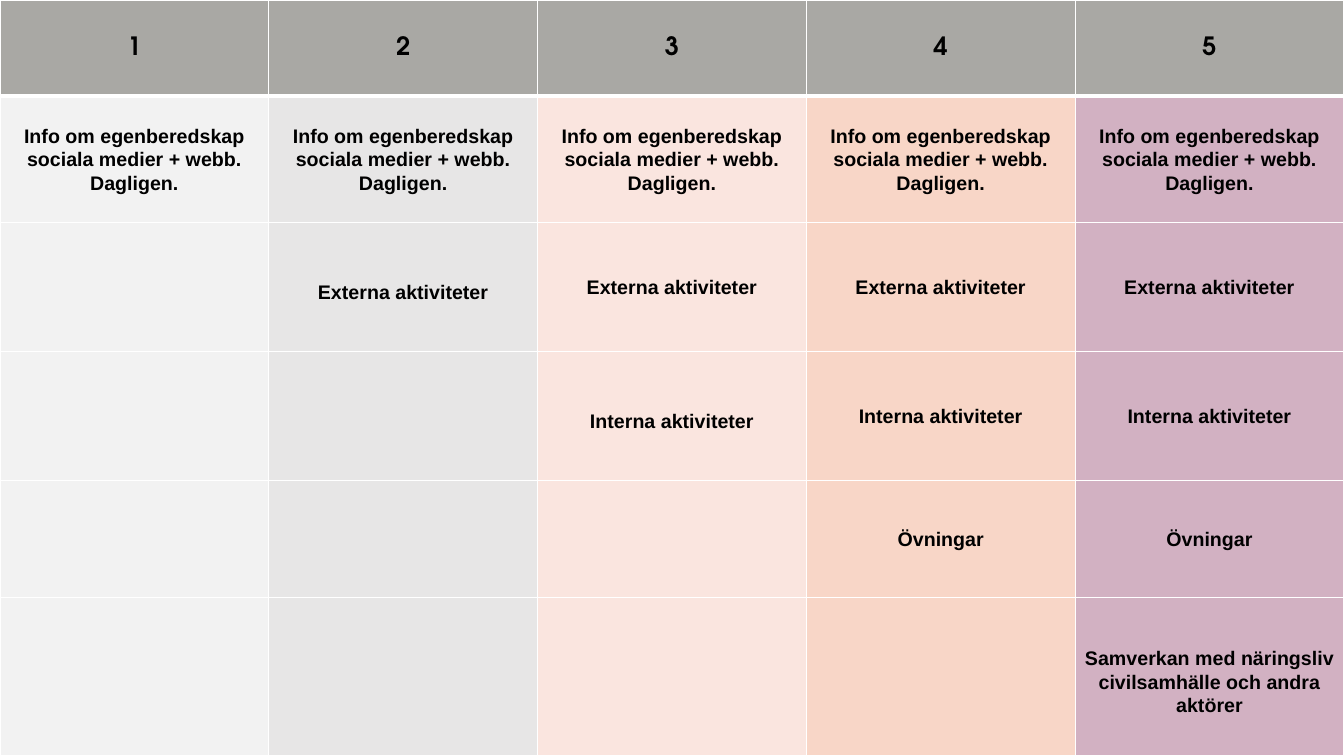
from dataclasses import dataclass

from lxml import etree
from pptx import Presentation
from pptx.dml.color import RGBColor
from pptx.enum.text import MSO_ANCHOR, PP_ALIGN
from pptx.oxml.ns import qn
from pptx.table import _Cell
from pptx.util import Inches, Pt

MIDDLE = MSO_ANCHOR.MIDDLE
CENTER = PP_ALIGN.CENTER

BLACK = RGBColor(0x00, 0x00, 0x00)
WHITE = RGBColor(0xFF, 0xFF, 0xFF)
HEADER_GRAY = RGBColor(0xA9, 0xA8, 0xA4)
LEVEL_COLORS = [
    RGBColor(0xF2, 0xF2, 0xF2),
    RGBColor(0xE7, 0xE6, 0xE6),
    RGBColor(0xFA, 0xE5, 0xDF),
    RGBColor(0xF8, 0xD6, 0xC7),
    RGBColor(0xD2, 0xB1, 0xC2),
]

SLIDE_WIDTH = 13.33
SLIDE_HEIGHT = 7.5
HEADER_HEIGHT = 0.95
THIN_BORDER = 1
HEADER_BORDER = 3


@dataclass(frozen=True)
class Activity:
    text: str
    first_level: int
    height: float
    first_top_margin: float = 0


ACTIVITIES = [
    Activity("Info om egenberedskap sociala medier + webb. Dagligen.", 1, 1.26),
    Activity("Externa aktiviteter", 2, 1.28, 0.1),
    Activity("Interna aktiviteter", 3, 1.28, 0.1),
    Activity("Övningar", 4, 1.16),
    Activity("Samverkan med näringsliv civilsamhälle och andra aktörer", 5, 1.57, 0.1),
]


def add_border(cell: _Cell, side: str, points: float) -> None:
    properties = cell._tc.get_or_add_tcPr()
    line = etree.SubElement(properties, qn(f"a:{side}"), w=str(Pt(points)))
    fill = etree.SubElement(line, qn("a:solidFill"))
    etree.SubElement(fill, qn("a:srgbClr"), val=str(WHITE))


def style_cell(cell: _Cell, color: RGBColor, top: float, bottom: float) -> None:
    borders = {"lnL": THIN_BORDER, "lnR": THIN_BORDER, "lnT": top, "lnB": bottom}
    for side, points in borders.items():
        add_border(cell, side, points)
    cell.fill.solid()
    cell.fill.fore_color.rgb = color
    cell.vertical_anchor = MIDDLE
    cell.margin_left = cell.margin_right = Inches(0.07)
    cell.margin_top = cell.margin_bottom = Inches(0)


def write_cell(cell: _Cell, text: str, font_name: str, size: float) -> None:
    cell.text = text
    paragraph = cell.text_frame.paragraphs[0]
    paragraph.alignment = CENTER
    paragraph.line_spacing = 1.06
    paragraph.font.name = font_name
    paragraph.font.size = Pt(size)
    paragraph.font.bold = True
    paragraph.font.color.rgb = BLACK


def main() -> None:
    presentation = Presentation()
    presentation.slide_width = Inches(SLIDE_WIDTH)
    presentation.slide_height = Inches(SLIDE_HEIGHT)
    slide = presentation.slides.add_slide(presentation.slide_layouts[6])

    table = slide.shapes.add_table(
        len(ACTIVITIES) + 1, len(LEVEL_COLORS),
        Inches(0), Inches(0), Inches(SLIDE_WIDTH), Inches(SLIDE_HEIGHT),
    ).table
    table.first_row = False
    table.horz_banding = False
    table.rows[0].height = Inches(HEADER_HEIGHT)

    for level, color in enumerate(LEVEL_COLORS, start=1):
        column = level - 1
        table.columns[column].width = Inches(SLIDE_WIDTH / len(LEVEL_COLORS))
        header = table.cell(0, column)
        style_cell(header, HEADER_GRAY, THIN_BORDER, HEADER_BORDER)
        write_cell(header, str(level), "TeX Gyre Adventor", 18)

        for row, activity in enumerate(ACTIVITIES, start=1):
            table.rows[row].height = Inches(activity.height)
            cell = table.cell(row, column)
            top = HEADER_BORDER if row == 1 else THIN_BORDER
            style_cell(cell, color, top, THIN_BORDER)
            if level >= activity.first_level:
                write_cell(cell, activity.text, "Arial", 14)
            if level == activity.first_level:
                cell.margin_top = Inches(activity.first_top_margin)

    presentation.save("out.pptx")


if __name__ == "__main__":
    main()
